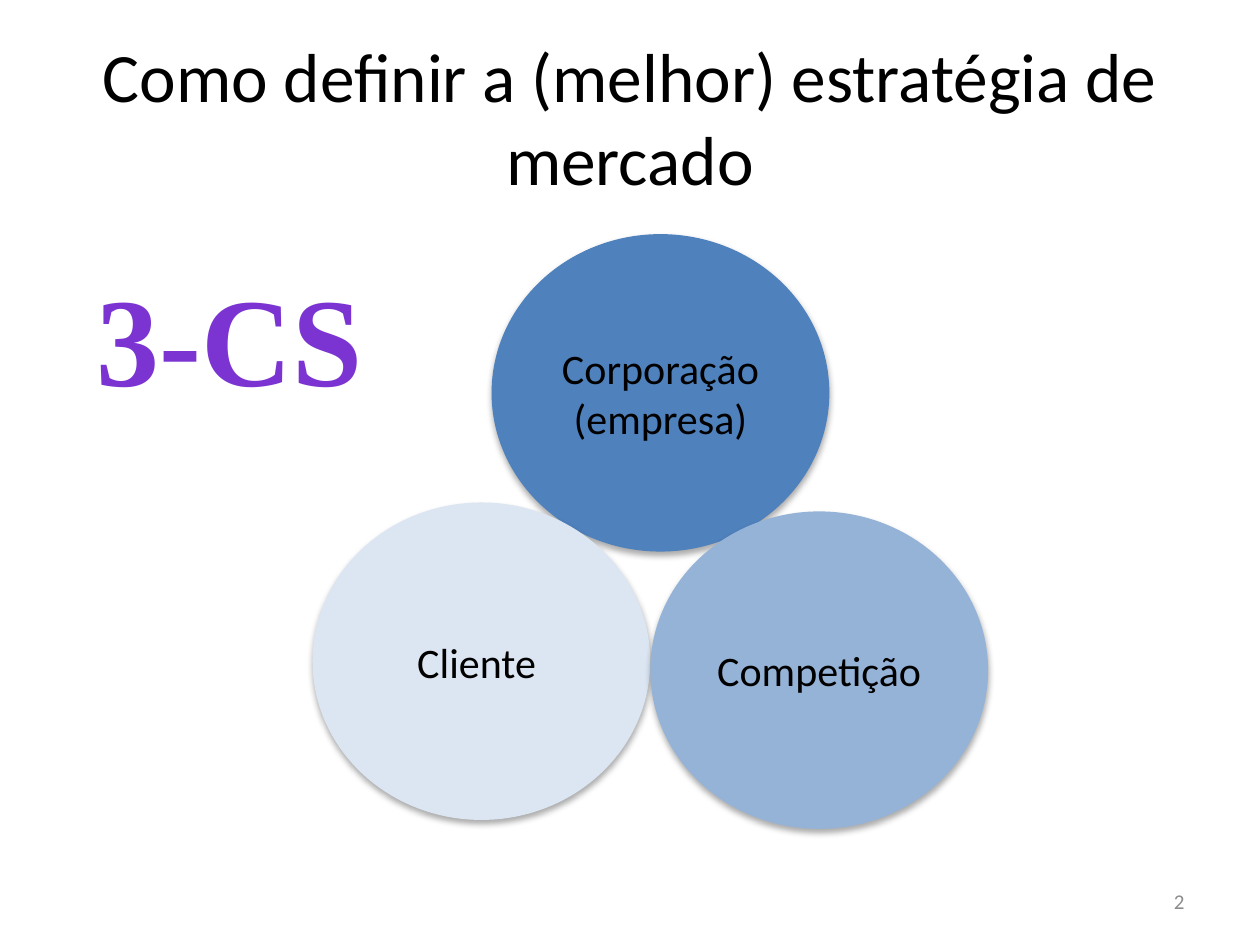
"""Build the 3-CS market strategy slide."""
from lxml import etree
from pptx import Presentation
from pptx import util as u
from pptx.dml.color import RGBColor
from pptx.enum import shapes, text
from pptx.oxml.ns import qn

TITLE = "Como definir a (melhor) estratégia de mercado"
HEADING = "3-CS"
PAGE_NUMBER = "2"
CIRCLE_SIZE = (6.81, 6.4)
CIRCLES = [
    ("Corporação (empresa)", 9.91, 4.72, "4F81BD"),
    ("Cliente ", 6.3, 10.13, "DCE6F2"),
    ("Competição", 13.11, 10.31, "95B3D7"),
]


def color(value):
    return RGBColor.from_string(value)


def place(shape, *box):
    shape.left, shape.top, shape.width, shape.height = (u.Cm(n) for n in box)


def write(shape, content, size, font="Calibri", fill="000000", bold=False,
          align=text.PP_ALIGN.CENTER, anchor=text.MSO_ANCHOR.MIDDLE):
    frame = shape.text_frame
    frame.word_wrap = True
    frame.auto_size = text.MSO_AUTO_SIZE.NONE
    frame.vertical_anchor = anchor
    paragraph = frame.paragraphs[0]
    paragraph.alignment = align
    run = paragraph.add_run()
    run.text = content
    run.font.name, run.font.size, run.font.bold = font, u.Pt(size), bold
    run.font.color.rgb = color(fill)


def add_shadow(shape, blur=3.5, distance=2.2, opacity=32):
    shape.shadow.inherit = False
    effects = shape.fill._xPr.find(qn("a:effectLst"))
    shadow = etree.SubElement(
        effects, qn("a:outerShdw"), blurRad=str(u.Pt(blur)),
        dist=str(u.Pt(distance)), dir="5400000", rotWithShape="0")
    shade = etree.SubElement(shadow, qn("a:srgbClr"), val="000000")
    etree.SubElement(shade, qn("a:alpha"), val=str(opacity * 1000))


def add_circle(group, label, left, top, fill):
    box = [u.Cm(n) for n in (left, top, *CIRCLE_SIZE)]
    circle = group.shapes.add_shape(shapes.MSO_SHAPE.OVAL, *box)
    circle.fill.solid()
    circle.fill.fore_color.rgb = color(fill)
    circle.line.fill.background()
    add_shadow(circle)
    write(circle, label, 24)


def add_text(slide, box, content, size, **style):
    shape = slide.shapes.add_textbox(*(u.Cm(n) for n in box))
    write(shape, content, size, **style)


def main():
    presentation = Presentation()
    presentation.slide_width, presentation.slide_height = u.Cm(25.4), u.Cm(19.05)
    slide = presentation.slides.add_slide(presentation.slide_layouts[5])
    title = slide.shapes.title
    place(title, 1.27, 0.76, 22.86, 3.18)
    write(title, TITLE, 39.6)
    add_text(slide, (18.2, 17.66, 5.93, 1.01), PAGE_NUMBER, 12,
             fill="8C8C8C", align=text.PP_ALIGN.RIGHT)
    add_text(slide, (1.55, 5.13, 6.17, 3.33), HEADING, 72,
             font="Times New Roman", fill="7B34D2", bold=True,
             anchor=text.MSO_ANCHOR.TOP)
    group = slide.shapes.add_group_shape()
    for circle in CIRCLES:
        add_circle(group, *circle)
    presentation.save("out.pptx")


if __name__ == "__main__":
    main()
